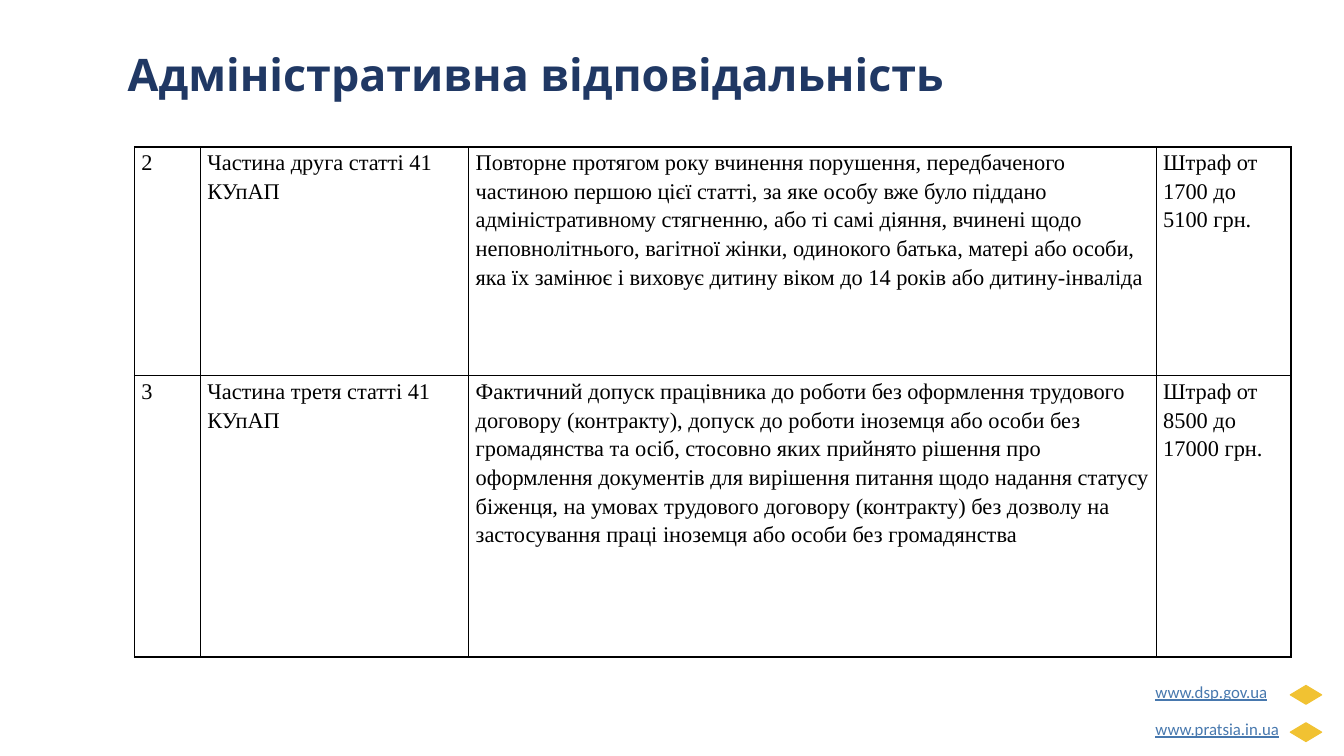
from lxml import etree
from pptx import Presentation
from pptx.dml.color import RGBColor
from pptx.enum.shapes import MSO_SHAPE
from pptx.enum.text import MSO_ANCHOR, MSO_AUTO_SIZE, PP_ALIGN
from pptx.oxml.ns import qn
from pptx.util import Inches, Pt

DIAMOND = MSO_SHAPE.FLOWCHART_DECISION
TOP = MSO_ANCHOR.TOP
GROW = MSO_AUTO_SIZE.SHAPE_TO_FIT_TEXT
LEFT = PP_ALIGN.LEFT

NAVY = RGBColor(0x20, 0x38, 0x64)
LINK_BLUE = RGBColor(0x47, 0x78, 0xAE)
GOLD = RGBColor(0xF1, 0xC2, 0x32)
BLACK = RGBColor(0, 0, 0)

GRID_COLUMNS, GRID_ROWS = 160, 90
LINK_PITCH = 4.44
COLUMN_SPANS = (7.85, 31.95, 81.84, 16.05)
ROW_SPANS = (27.25, 33.48)
SITES = ("www.dsp.gov.ua", "www.pratsia.in.ua")
OFFENCES = (
    ("2", "Частина друга статті 41 КУпАП",
     "Повторне протягом року вчинення порушення, передбаченого частиною першою "
     "цієї статті, за яке особу вже було піддано адміністративному стягненню, "
     "або ті самі діяння, вчинені щодо неповнолітнього, вагітної жінки, "
     "одинокого батька, матері або особи, яка їх замінює і виховує дитину "
     "віком до 14 років або дитину-інваліда",
     "Штраф от 1700 до 5100 грн."),
    ("3", "Частина третя статті 41 КУпАП",
     "Фактичний допуск працівника до роботи без оформлення трудового договору "
     "(контракту), допуск до роботи іноземця або особи без громадянства та осіб, "
     "стосовно яких прийнято рішення про оформлення документів для вирішення "
     "питання щодо надання статусу біженця, на умовах трудового договору "
     "(контракту) без дозволу на застосування праці іноземця або особи без "
     "громадянства",
     "Штраф от 8500 до 17000 грн."),
)


class SlideBuilder:
    """Draws styled elements on one slide, measured in grid columns and rows."""

    def __init__(self, presentation):
        self.column = presentation.slide_width / GRID_COLUMNS
        self.row = presentation.slide_height / GRID_ROWS
        self.slide = presentation.slides.add_slide(presentation.slide_layouts[5])

    def box(self, left, top, width, height):
        return (round(left * self.column), round(top * self.row),
                round(width * self.column), round(height * self.row))

    def style(self, paragraph, name, size, color):
        paragraph.alignment = LEFT
        font = paragraph.font
        font.name, font.size, font.color.rgb = name, Pt(size), color
        return font

    def title(self, text, *place):
        shape = self.slide.shapes.title
        shape.left, shape.top, shape.width, shape.height = self.box(*place)
        frame = shape.text_frame
        frame.text = text
        frame.vertical_anchor = TOP
        frame.auto_size = GROW
        self.style(frame.paragraphs[0], "Open Sans", 32, NAVY).bold = True

    def marker(self, *place):
        shape = self.slide.shapes.add_shape(DIAMOND, *self.box(*place))
        shape.shadow.inherit = False
        shape.fill.solid()
        shape.fill.fore_color.rgb = GOLD
        shape.line.color.rgb = GOLD
        shape.line.width = Pt(0.75)

    def web_address(self, text, *place):
        frame = self.slide.shapes.add_textbox(*self.box(*place)).text_frame
        frame.word_wrap = True
        frame.auto_size = GROW
        frame.margin_left = frame.margin_right = Inches(0.13)
        frame.margin_top = frame.margin_bottom = Inches(0.13)
        frame.text = text
        self.style(frame.paragraphs[0], "Calibri", 12, LINK_BLUE).underline = True

    def table(self, left, top, column_spans, row_spans, content):
        place = self.box(left, top, sum(column_spans), sum(row_spans))
        table = self.slide.shapes.add_table(
            len(row_spans), len(column_spans), *place).table
        table.first_row = table.horz_banding = False
        for column, span in zip(table.columns, column_spans):
            column.width = round(span * self.column)
        for row, span, texts in zip(table.rows, row_spans, content):
            row.height = round(span * self.row)
            for cell, text in zip(row.cells, texts):
                self.cell(cell, text)

    def cell(self, cell, text):
        cell.text = text
        cell.margin_left = cell.margin_right = Inches(0.07)
        cell.margin_top = cell.margin_bottom = 0
        paragraph = cell.text_frame.paragraphs[0]
        paragraph.line_spacing = 1.15
        self.style(paragraph, "Times New Roman", 16, BLACK)
        properties = cell._tc.get_or_add_tcPr()
        for side in ("a:lnL", "a:lnR", "a:lnT", "a:lnB"):
            line = etree.SubElement(properties, qn(side), w=str(Pt(1)))
            fill = etree.SubElement(line, qn("a:solidFill"))
            etree.SubElement(fill, qn("a:srgbClr"), val=str(BLACK))
        cell.fill.background()


def main():
    presentation = Presentation()
    presentation.slide_width = Inches(13.33)
    presentation.slide_height = Inches(7.5)
    builder = SlideBuilder(presentation)
    builder.title("Адміністративна відповідальність", 14, 5, 119.5, 7.7)
    builder.table(16, 17.5, COLUMN_SPANS, ROW_SPANS, OFFENCES)
    for index, site in enumerate(SITES):
        offset = index * LINK_PITCH
        builder.marker(153.6, 81.6 + offset, 3.75, 2.25)
        builder.web_address(site, 136, 79.9 + offset, 20.9, 5.6)
    presentation.save("out.pptx")


if __name__ == "__main__":
    main()
